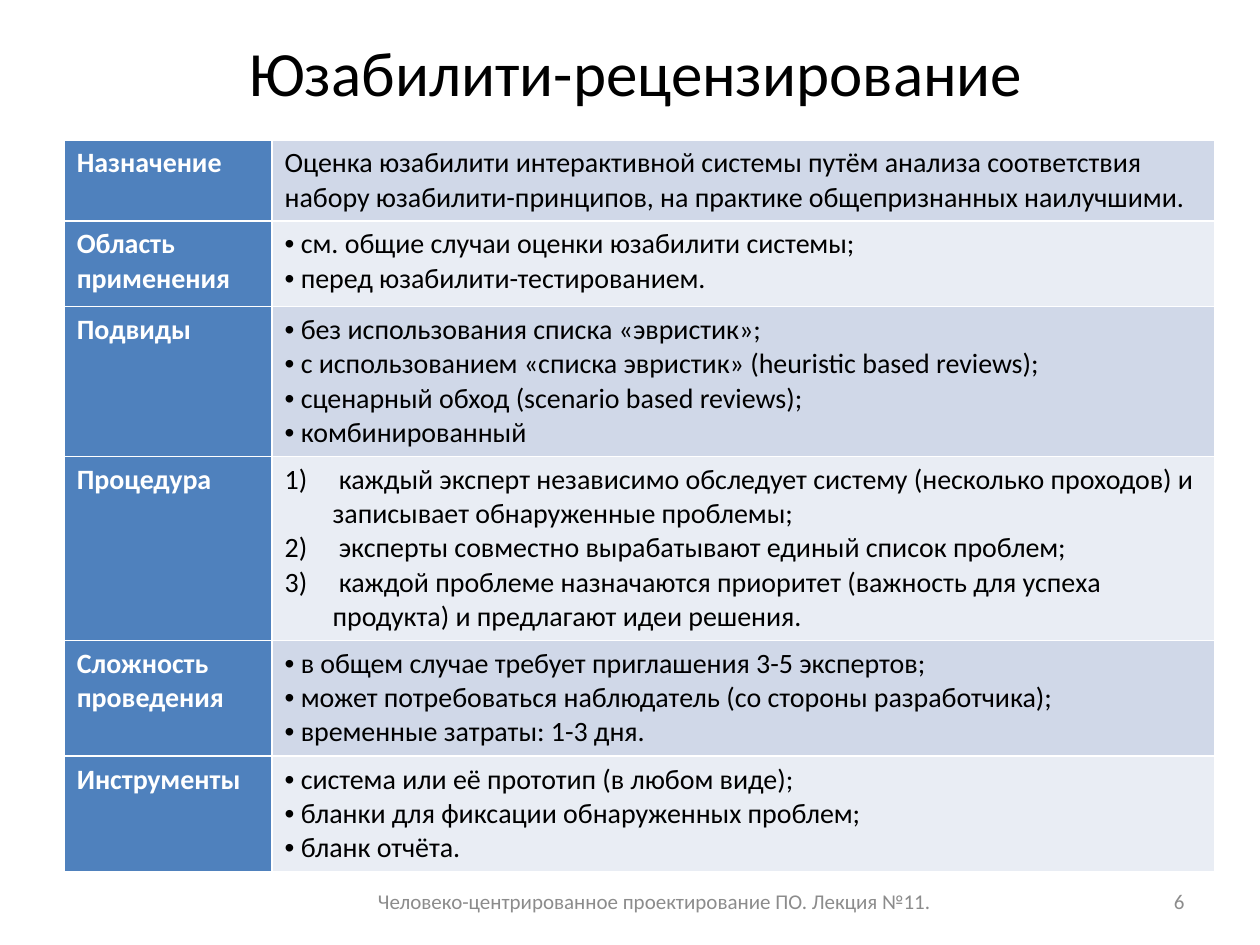
from pptx import Presentation
from pptx import util as u
from pptx.dml import color
from pptx.enum import text
from pptx.oxml import ns
from lxml import etree

FONT = "Calibri"
BLUE, BANDS = "4F81BD", ("D0D8E8", "E9EDF4")
WHITE, BLACK, GREY = "FFFFFF", "000000", "8C8C8C"

# Label, row height, list kind, lines
ROWS = [
    ("Назначение", 0.64, None, [
        "Оценка юзабилити интерактивной системы путём анализа соответствия "
        "набору юзабилити-принципов, на практике общепризнанных наилучшими."]),
    ("Область применения", 0.68, "dot", [
        " см. общие случаи оценки юзабилити системы;",
        " перед юзабилити-тестированием."]),
    ("Подвиды", 1.19, "dot", [
        " без использования списка «эвристик»;",
        " с использованием «списка эвристик» (heuristic based reviews);",
        " сценарный обход (scenario based reviews);",
        " комбинированный"]),
    ("Процедура", 1.45, "num", [
        " каждый эксперт независимо обследует систему (несколько проходов) "
        "и записывает обнаруженные проблемы;",
        " эксперты совместно вырабатывают единый список проблем;",
        " каждой проблеме назначаются приоритет (важность для успеха "
        "продукта) и предлагают идеи решения."]),
    ("Сложность проведения", 0.92, "dot", [
        " в общем случае требует приглашения 3-5 экспертов;",
        " может потребоваться наблюдатель (со стороны разработчика);",
        " временные затраты: 1-3 дня."]),
    ("Инструменты", 0.91, "dot", [
        " система или её прототип (в любом виде);",
        " бланки для фиксации обнаруженных проблем;",
        " бланк отчёта."]),
]


def rgb(code):
    return color.RGBColor.from_string(code)


def add_run(para, words, size, code, bold=False):
    run = para.add_run()
    run.text = words
    font = run.font
    font.name, font.size, font.bold = FONT, u.Pt(size), bold
    font.color.rgb = rgb(code)


def set_list(para, kind):
    props = para._p.get_or_add_pPr()
    if kind == "num":
        props.set("marL", str(u.Inches(0.38)))
        props.set("indent", str(-u.Inches(0.38)))
        etree.SubElement(props, ns.qn("a:buAutoNum"), type="arabicParenR")
    elif kind == "dot":
        etree.SubElement(props, ns.qn("a:buFont"), typeface="Arial")
        etree.SubElement(props, ns.qn("a:buChar"), char="•")


def set_edges(cell):
    props = cell._tc.get_or_add_tcPr()
    for side in ("lnL", "lnR", "lnT", "lnB"):
        line = etree.SubElement(props, ns.qn("a:" + side), w=str(u.Pt(1)))
        fill = etree.SubElement(line, ns.qn("a:solidFill"))
        etree.SubElement(fill, ns.qn("a:srgbClr"), val=WHITE)


def fill_cell(cell, lines, back, code, bold=False, kind=None):
    set_edges(cell)
    cell.fill.solid()
    cell.fill.fore_color.rgb = rgb(back)
    frame = cell.text_frame
    for i, words in enumerate(lines):
        para = frame.add_paragraph() if i else frame.paragraphs[0]
        set_list(para, kind)
        add_run(para, words, 16, code, bold)


def place_title(slide, box, words):
    title = slide.shapes.title
    title.left, title.top, title.width, title.height = map(u.Inches, box)
    frame = title.text_frame
    frame.word_wrap = True
    frame.auto_size = text.MSO_AUTO_SIZE.NONE
    frame.vertical_anchor = text.MSO_ANCHOR.MIDDLE
    para = frame.paragraphs[0]
    para.alignment = text.PP_ALIGN.CENTER
    add_run(para, words, 36, BLACK)


def add_table(slide, box, label_w):
    left, top, width, height = box
    table = slide.shapes.add_table(
        len(ROWS), 2, *map(u.Inches, box)).table
    table.first_row = table.horz_banding = False
    table.columns[0].width = u.Inches(label_w)
    table.columns[1].width = u.Inches(width - label_w)
    for i, (label, tall, kind, lines) in enumerate(ROWS):
        table.rows[i].height = u.Inches(tall)
        fill_cell(table.cell(i, 0), [label], BLUE, WHITE, bold=True)
        fill_cell(table.cell(i, 1), lines, BANDS[i % 2], BLACK, kind=kind)


def add_note(slide, box, words, align):
    frame = slide.shapes.add_textbox(*map(u.Inches, box)).text_frame
    frame.word_wrap = True
    frame.vertical_anchor = text.MSO_ANCHOR.MIDDLE
    para = frame.paragraphs[0]
    para.alignment = align
    add_run(para, words, 12, GREY)


def main():
    deck = Presentation()
    deck.slide_width, deck.slide_height = u.Inches(10), u.Inches(7.5)
    slide = deck.slides.add_slide(deck.slide_layouts[5])

    place_title(slide, (0.55, 0.31, 9, 0.52), "Юзабилити-рецензирование")
    add_table(slide, (0.51, 1.11, 9.13, 5.79), 1.65)

    # Footer and page number
    add_note(slide, (2.58, 6.95, 5.23, 0.4),
             "Человеко-центрированное проектирование ПО. Лекция №11.",
             text.PP_ALIGN.CENTER)
    add_note(slide, (7.17, 6.95, 2.33, 0.4), "6", text.PP_ALIGN.RIGHT)

    deck.save("out.pptx")


if __name__ == "__main__":
    main()
